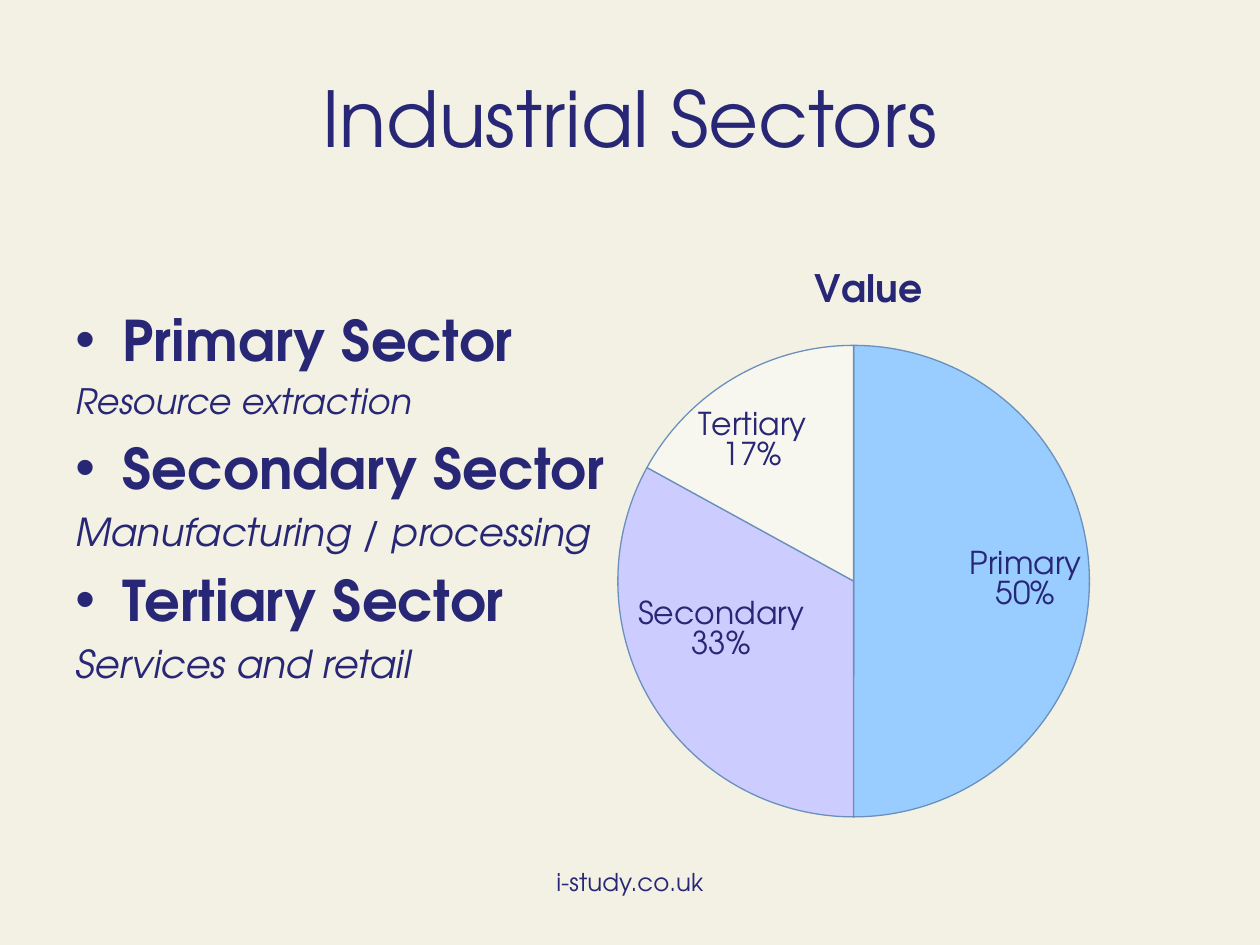
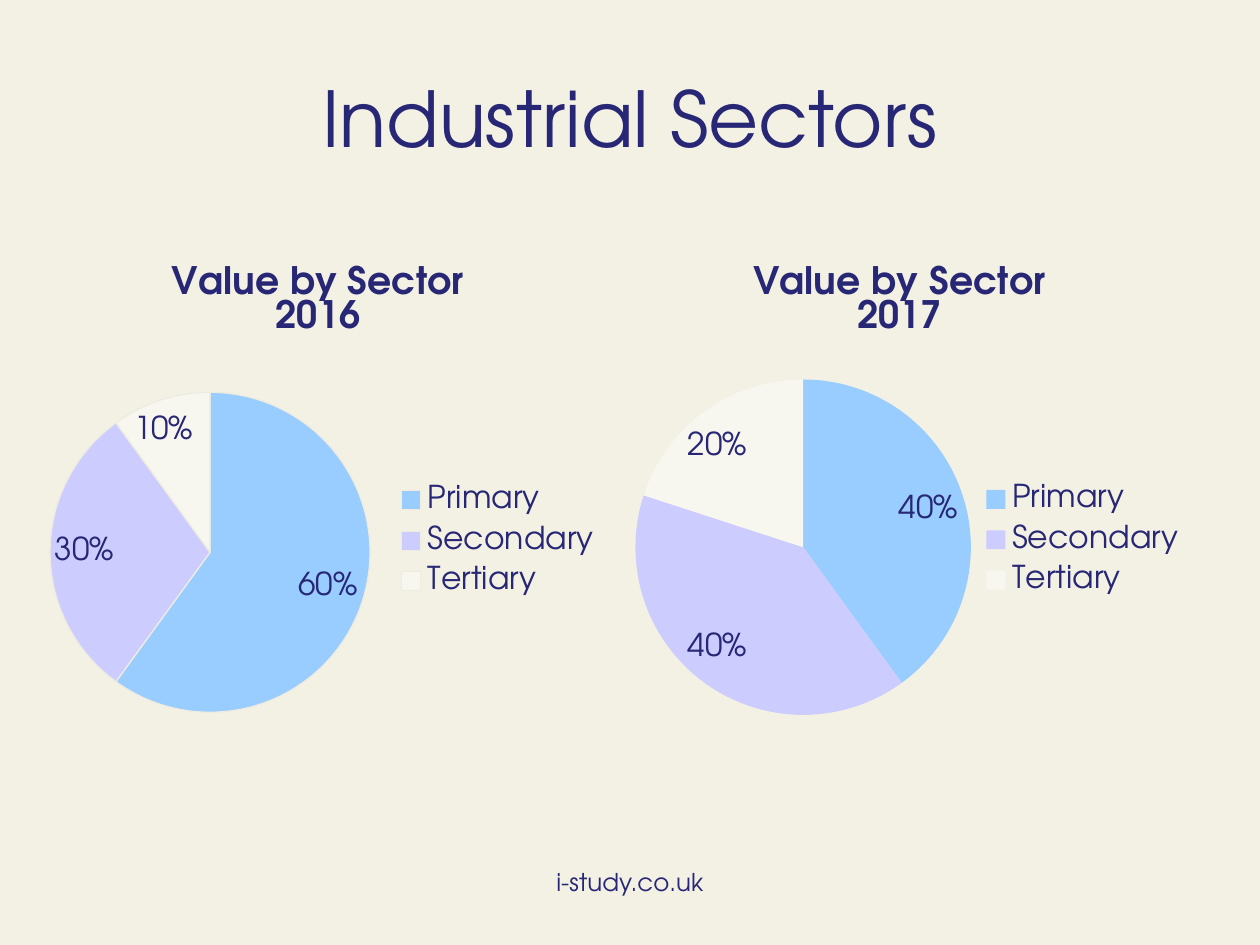
from dataclasses import dataclass
from typing import Optional

from lxml.etree import SubElement
from pptx import Presentation
from pptx.chart.data import CategoryChartData
from pptx.dml.color import RGBColor
from pptx.enum.chart import XL_CHART_TYPE, XL_LABEL_POSITION, XL_LEGEND_POSITION
from pptx.enum.text import MSO_ANCHOR, PP_ALIGN
from pptx.oxml import parse_xml
from pptx.oxml.ns import nsdecls, qn
from pptx.util import Pt

FONT = "TeX Gyre Adventor"
COLORS = {
    "background": "F3F1E4",
    "text": "272776",
    "Primary": "99CCFF",
    "Secondary": "CCCCFF",
    "Tertiary": "F8F7EF",
    "outline": "6A90BC",
    "pale": "EEECE1",
}
SECTORS = ("Primary", "Secondary", "Tertiary")
HANGING = 27


@dataclass
class Box:
    left: float
    top: float
    width: float
    height: float

    def lengths(self) -> tuple:
        return Pt(self.left), Pt(self.top), Pt(self.width), Pt(self.height)

    def within(self, outer: "Box") -> dict:
        return {
            "x": round((self.left - outer.left) / outer.width, 4),
            "y": round((self.top - outer.top) / outer.height, 4),
            "w": round(self.width / outer.width, 4),
            "h": round(self.height / outer.height, 4),
        }


@dataclass
class Pie:
    box: Box
    title: tuple
    series: str
    values: tuple
    plot: Box
    line: Optional[str] = None
    title_box: Optional[Box] = None
    legend_box: Optional[Box] = None


@dataclass
class Sector:
    name: str
    activity: str
    activity_size: float


TITLE_BOX = Box(36, 21.6, 648, 90)
FOOTER_BOX = Box(246, 492, 228, 37.5)
BODY_BOX = Box(36, 171.1, 648, 311.3)

SECTOR_NOTES = (
    Sector("Primary Sector", "Resource extraction", 20),
    Sector("Secondary Sector", "Manufacturing / processing", 22),
    Sector("Tertiary Sector", "Services and retail", 22),
)
OVERVIEW = Pie(Box(48.2, 116.6, 607, 374.4), ("Value",), "Value", (50, 33, 17),
               Box(353.1, 197.4, 269.5, 269.5), "outline",
               title_box=Box(461.8, 150.9, 70, 30))
YEARS = (
    Pie(Box(0, 139.7, 363.6, 277.9), ("Value by Sector", "2016"), "Series 1",
        (60, 30, 10), Box(28.6, 224.2, 182.9, 182.9), "pale",
        legend_box=Box(225.5, 271.5, 118, 75)),
    Pie(Box(326.2, 139.7, 375.8, 279.4), ("Value by Sector", "2017"), "Series 1",
        (40, 40, 20), Box(363.1, 216.9, 191.7, 191.7),
        legend_box=Box(559.5, 271, 118, 75)),
)


def color(name: str) -> RGBColor:
    return RGBColor.from_string(COLORS[name])


def style_font(font, size: float, bold: bool = False, italic: bool = False) -> None:
    font.name = FONT
    font.size = Pt(size)
    font.bold = bold
    font.italic = italic
    font.color.rgb = color("text")


def add_run(p, text: str, size: float, bold: bool = False, italic: bool = False) -> None:
    r = p.add_run()
    r.text = text
    style_font(r.font, size, bold, italic)


def add_frame(s, box: Box):
    tf = s.shapes.add_textbox(*box.lengths()).text_frame
    tf.word_wrap = True
    return tf


def add_centered(s, box: Box, text: str, size: float, anchor=MSO_ANCHOR.TOP) -> None:
    tf = add_frame(s, box)
    tf.vertical_anchor = anchor
    p = tf.paragraphs[0]
    p.alignment = PP_ALIGN.CENTER
    add_run(p, text, size)


def add_slide(prs):
    s = prs.slides.add_slide(prs.slide_layouts[6])
    s.background.fill.solid()
    s.background.fill.fore_color.rgb = color("background")
    add_centered(s, TITLE_BOX, "Industrial Sectors", 44, MSO_ANCHOR.MIDDLE)
    add_centered(s, FOOTER_BOX, "i-study.co.uk", 14)
    return s


def add_bullet(p) -> None:
    ppr = p._p.get_or_add_pPr()
    ppr.set("marL", str(Pt(HANGING)))
    ppr.set("indent", str(-Pt(HANGING)))
    SubElement(ppr, qn("a:buFont"), typeface="Arial")
    SubElement(ppr, qn("a:buChar"), char="•")


def add_sector_notes(s) -> None:
    tf = add_frame(s, BODY_BOX)
    for i, sector in enumerate(SECTOR_NOTES):
        p = tf.add_paragraph() if i else tf.paragraphs[0]
        if i:
            p.space_before = Pt(6.4)
        add_bullet(p)
        add_run(p, sector.name, 32, bold=True)
        p = tf.add_paragraph()
        p.space_before = Pt(sector.activity_size * 0.2)
        add_run(p, sector.activity, sector.activity_size, italic=True)


def set_layout(parent, index: int, **parts) -> None:
    for old in parent.findall(qn("c:layout")):
        parent.remove(old)
    layout = parse_xml(f"<c:layout {nsdecls('c')}><c:manualLayout/></c:layout>")
    for tag, value in parts.items():
        SubElement(layout[0], qn(f"c:{tag}"), val=str(value))
    parent.insert(index, layout)


def add_chart_title(chart, pie: Pie) -> None:
    title = chart.chart_title
    title.include_in_layout = False
    tf = title.text_frame
    for i, text in enumerate(pie.title):
        p = tf.add_paragraph() if i else tf.paragraphs[0]
        add_run(p, text, 21.6, bold=True)
    if pie.title_box:
        place = pie.title_box.within(pie.box)
        set_layout(title._element, 1, xMode="edge", yMode="edge",
                   x=place["x"], y=place["y"])


def add_legend(chart, pie: Pie) -> None:
    chart.has_legend = pie.legend_box is not None
    if pie.legend_box:
        legend = chart.legend
        legend.position = XL_LEGEND_POSITION.RIGHT
        legend.include_in_layout = False
        style_font(legend.font, 18)
        set_layout(legend._element, 1, xMode="edge", yMode="edge",
                   **pie.legend_box.within(pie.box))


def place_plot(chart, pie: Pie) -> None:
    root = chart._chartSpace.find(qn("c:chart"))
    set_layout(root.find(qn("c:plotArea")), 0, layoutTarget="inner",
               xMode="edge", yMode="edge", **pie.plot.within(pie.box))
    root.addnext(parse_xml(f"<c:spPr {nsdecls('c', 'a')}><a:noFill/>"
                           "<a:ln><a:noFill/></a:ln></c:spPr>"))


def add_labels(plot, with_names: bool) -> None:
    plot.has_data_labels = True
    labels = plot.data_labels
    labels.show_value = False
    labels.show_percentage = True
    labels.show_category_name = with_names
    labels.number_format = "0%"
    labels.number_format_is_linked = False
    labels.position = XL_LABEL_POSITION.BEST_FIT
    style_font(labels.font, 18)
    if with_names:
        separator = parse_xml(f"<c:separator {nsdecls('c')}>\n</c:separator>")
        labels._element.find(qn("c:showBubbleSize")).addnext(separator)


def add_pie(s, pie: Pie) -> None:
    data = CategoryChartData()
    data.categories = SECTORS
    data.add_series(pie.series, pie.values)
    chart = s.shapes.add_chart(XL_CHART_TYPE.PIE, *pie.box.lengths(), data).chart
    style_font(chart.font, 18)
    add_chart_title(chart, pie)
    add_legend(chart, pie)
    plot = chart.plots[0]
    plot.vary_by_categories = True
    for i, sector in enumerate(SECTORS):
        fmt = plot.series[0].points[i].format
        fmt.fill.solid()
        fmt.fill.fore_color.rgb = color(sector)
        if pie.line:
            fmt.line.color.rgb = color(pie.line)
            fmt.line.width = Pt(0.75)
        else:
            fmt.line.fill.background()
    add_labels(plot, pie.legend_box is None)
    place_plot(chart, pie)


def main() -> None:
    prs = Presentation()
    prs.slide_width = Pt(720)
    prs.slide_height = Pt(540)
    s = add_slide(prs)
    add_pie(s, OVERVIEW)
    add_sector_notes(s)
    s = add_slide(prs)
    for pie in YEARS:
        add_pie(s, pie)
    prs.save("out.pptx")


if __name__ == "__main__":
    main()
